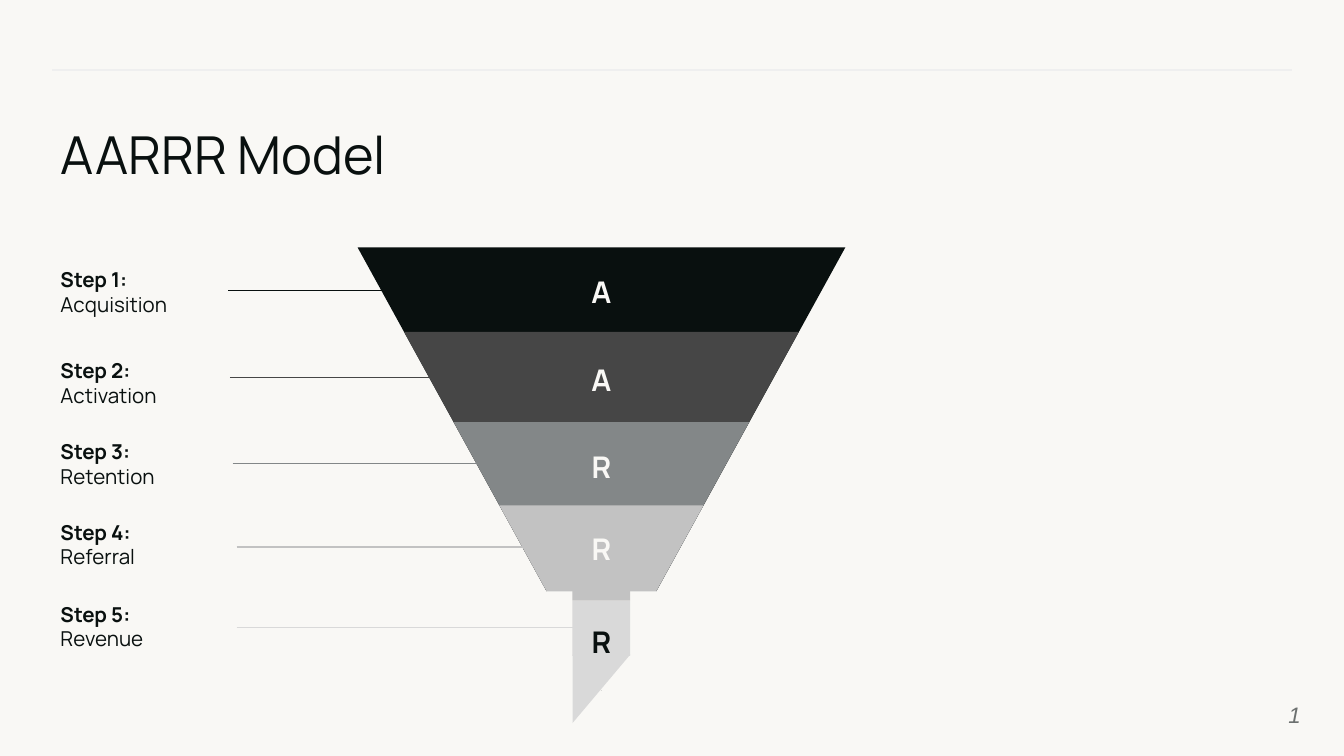
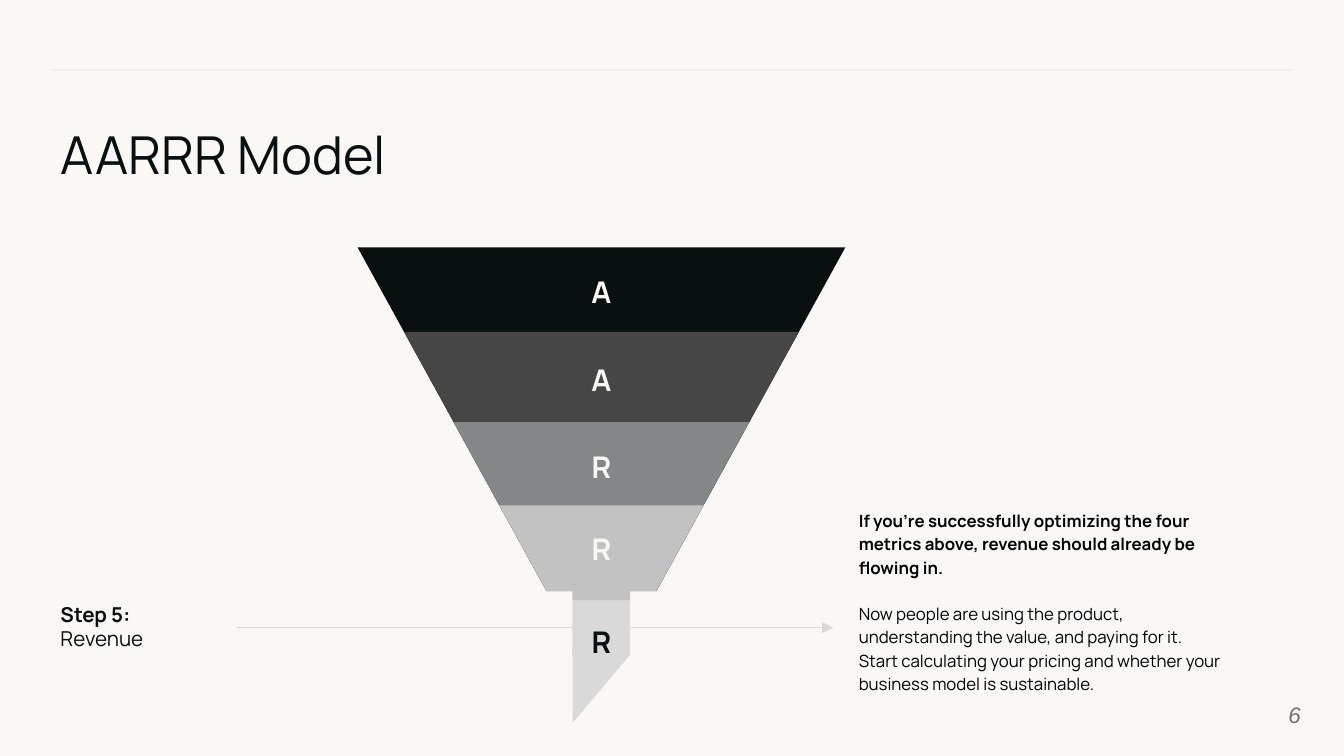
"""Build two slides of the AARRR funnel: all steps, then the revenue step."""
from lxml.etree import SubElement
from pptx import Presentation
from pptx.dml.color import RGBColor
from pptx.enum.shapes import MSO_CONNECTOR as Conn, MSO_SHAPE as Form
from pptx.enum.text import MSO_ANCHOR as Anchor, MSO_AUTO_SIZE as Auto, PP_ALIGN as Align
from pptx.oxml.ns import qn
from pptx.util import Inches, Pt

INK, PAPER, RULE, GREY = "09100F", "F9F8F5", "EFEFEF", "6C706F"
SHADES = [INK, "464646", "838788", "C2C2C2", "D9D9D9"]
MID, TIP = 4.475, 5.14
TOPS = [1.84, 2.47, 3.14, 3.76]
SIGNS = [
    ("A", 1.84, 0.62, PAPER),
    ("A", 2.47, 0.67, PAPER),
    ("R", 3.14, 0.62, PAPER),
    ("R", 3.75, 0.62, PAPER),
    ("R", 4.47, 0.57, INK),
]
STEPS = [
    (1, "Acquisition", 2, 1.7, 4.31, 2.16),
    (2, "Activation", 2.68, 1.71, 3.49, 2.81),
    (3, "Retention", 3.28, 1.73, 4.93, 3.45),
    (4, "Referral", 3.88, 1.76, 4.08, 4.07),
    (5, "Revenue", 4.49, 1.76, 4.67, 4.67),
]
NOTE = [
    ("If you’re successfully optimizing the four metrics above, "
     "revenue should already be flowing in.", True),
    ("Now people are using the product, understanding the value, and paying for it. "
     "Start calculating your pricing and whether your business model is sustainable.", False),
]

prs = Presentation()
prs.slide_width, prs.slide_height = Inches(10), Inches(5.625)


def color(code):
    return RGBColor.from_string(code)


def write(box, spot, lines, size=11, ink=INK, font="Manrope", italic=False,
          align=Align.LEFT, anchor=Anchor.MIDDLE, lead=None, after=0):
    box.left, box.top, box.width, box.height = [Inches(n) for n in spot]
    frame = box.text_frame
    frame.word_wrap, frame.auto_size = True, Auto.NONE
    frame.vertical_anchor = anchor
    frame.margin_left = frame.margin_top = frame.margin_right = frame.margin_bottom = 0
    for i, (words, bold) in enumerate(lines):
        par = frame.add_paragraph() if i else frame.paragraphs[0]
        par.alignment, par.line_spacing = align, lead
        par.space_before, par.space_after = Pt(0), Pt(after)
        run = par.add_run()
        run.text = words
        run.font.name, run.font.size = font, Pt(size)
        run.font.bold, run.font.italic = bold, italic
        run.font.color.rgb = color(ink)


for page, shown in (("1", STEPS), ("6", STEPS[-1:])):
    slide = prs.slides.add_slide(prs.slide_layouts[5])
    slide.background.fill.solid()
    slide.background.fill.fore_color.rgb = color(PAPER)
    shapes = slide.shapes
    write(shapes.title, (0.45, 0.91, 9.23, 0.51), [("AARRR Model", False)],
          size=28, anchor=Anchor.TOP, after=10)

    parts = []
    for top, shade in zip(TOPS, SHADES):
        tall = TIP - top
        wide = 1.1 * tall
        parts.append((Form.ISOSCELES_TRIANGLE, MID - wide / 2, top, wide, tall, shade))
    parts += [
        (Form.RECTANGLE, 4.02, 4.4, 0.91, 0.74, PAPER),
        (Form.RECTANGLE, 4.26, 4.36, 0.43, 0.11, SHADES[3]),
        (Form.RECTANGLE, 4.26, 4.47, 0.43, 0.41, SHADES[4]),
        (Form.RIGHT_TRIANGLE, 4.26, 4.87, 0.43, 0.51, SHADES[4]),
    ]
    for form, x, y, w, h, shade in parts:
        part = shapes.add_shape(form, Inches(x), Inches(y), Inches(w), Inches(h))
        part.shadow.inherit = False
        part.fill.solid()
        part.fill.fore_color.rgb = color(shade)
        part.line.fill.background()
        if form != Form.RECTANGLE:
            part.rotation = 180
        if form == Form.RIGHT_TRIANGLE:
            part._element.spPr.find(qn("a:xfrm")).set("flipH", "1")

    wires = [(9.61, 0.39, 0.52, RULE, False)]
    for rank, name, top, start, end, y in shown:
        wires.append((start, end, y, SHADES[rank - 1], False))
        write(shapes.add_textbox(0, 0, 0, 0), (0.45, top, 1.25, 0.34),
              [(f"Step {rank}:", True), (name, False)])
    if page == "6":
        wires.append((4.57, 6.2, 4.67, SHADES[4], True))
        note = shapes.add_textbox(0, 0, 0, 0)
        write(note, (6.39, 3.37, 2.69, 2.2), NOTE, size=9, ink="000000", lead=1.15)
        note.text_frame.paragraphs[0].space_after = Pt(12.5)
    for start, end, y, shade, arrow in wires:
        wire = shapes.add_connector(Conn.STRAIGHT, Inches(start), Inches(y), Inches(end), Inches(y))
        wire.line.color.rgb, wire.line.width = color(shade), Pt(0.75)
        if arrow:
            SubElement(wire._element.spPr.find(qn("a:ln")), qn("a:tailEnd"), type="triangle")
        SubElement(wire._element.spPr, qn("a:effectLst"))

    for sign, top, depth, ink in SIGNS:
        write(shapes.add_textbox(0, 0, 0, 0), (3.8, top, 1.35, depth), [(sign, True)],
              size=16, ink=ink, align=Align.CENTER, lead=1.15)
    write(shapes.add_textbox(0, 0, 0, 0), (9.08, 5.1, 0.6, 0.43), [(page, False)],
          size=12, ink=GREY, font="Arial", italic=True, align=Align.RIGHT)

prs.save("out.pptx")
